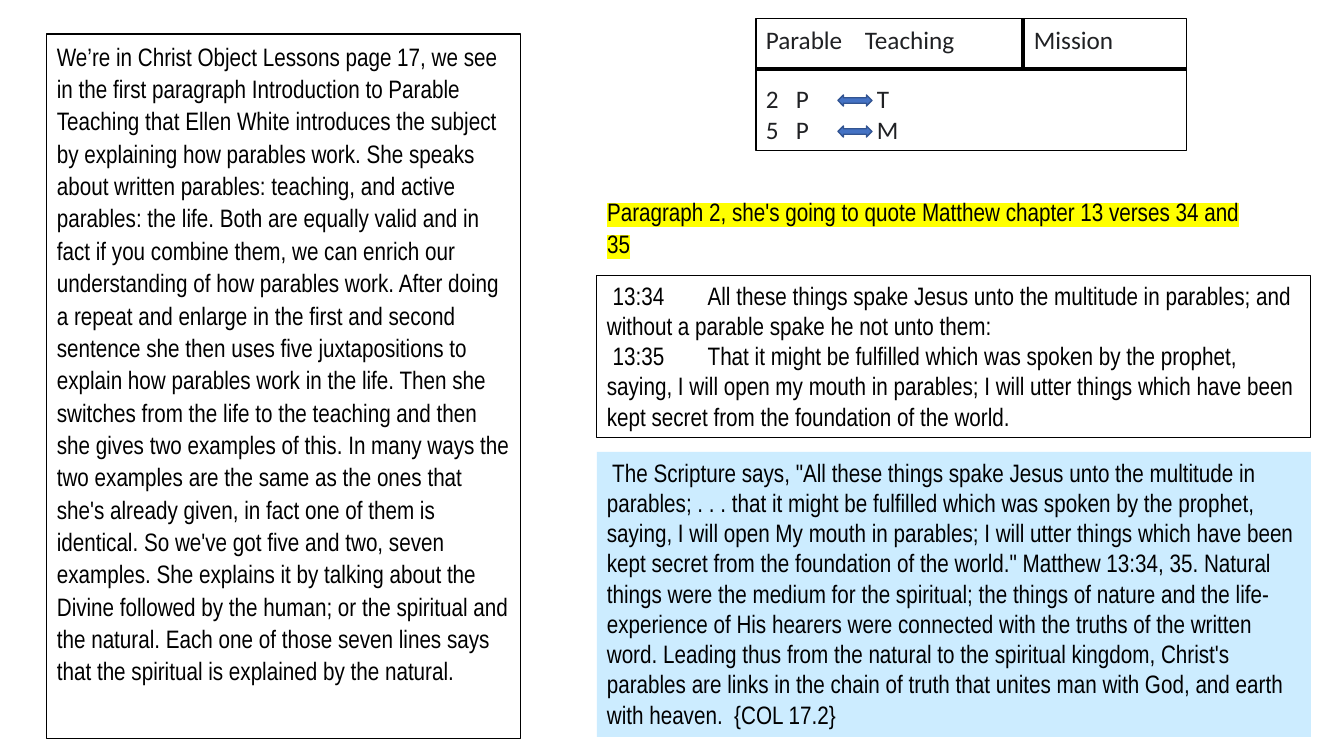
"""Build a study slide on parable teaching."""
from dataclasses import dataclass

from lxml.etree import SubElement as Sub
from pptx import Presentation
from pptx.dml.color import RGBColor as Rgb
from pptx.enum.shapes import MSO_CONNECTOR as Link, MSO_SHAPE as Form
from pptx.enum.text import MSO_ANCHOR as Anchor, MSO_AUTO_SIZE as Fit, PP_ALIGN as Align
from pptx.oxml.ns import qn
from pptx.util import Pt

PX = 914400 / 100.8


@dataclass(frozen=True)
class Theme:
    """Hold colours, fonts and sizes."""
    ink: str = "000000"
    grey: str = "202124"
    white: str = "FFFFFF"
    sky: str = "CCECFF"
    mark: str = "FFFF00"
    blue: str = "4472C4"
    navy: str = "325491"
    body: str = "Arial Narrow"
    head: str = "Calibri"
    size: int = 18
    thin: float = 0.75
    bold: float = 2.25
    loose: float = 1.07


T = Theme()

STUDY = " ".join((
    "We’re in Christ Object Lessons page 17, we see in the first paragraph "
    "Introduction to Parable Teaching that Ellen White introduces the subject by "
    "explaining how parables work.",
    "She speaks about written parables: teaching, and active parables: the life.",
    "Both are equally valid and in fact if you combine them, we can enrich our "
    "understanding of how parables work.",
    "After doing a repeat and enlarge in the first and second sentence she then uses "
    "five juxtapositions to explain how parables work in the life.",
    "Then she switches from the life to the teaching and then she gives two examples "
    "of this.",
    "In many ways the two examples are the same as the ones that she's already given, "
    "in fact one of them is identical.",
    "So we've got five and two, seven examples.",
    "She explains it by talking about the Divine followed by the human; or the "
    "spiritual and the natural.",
    "Each one of those seven lines says that the spiritual is explained by the natural.",
))
TITLE = "Paragraph 2, she's going to quote Matthew chapter 13 verses 34 and 35"
VERSES = (
    " 13:34\tAll these things spake Jesus unto the multitude in parables; and without "
    "a parable spake he not unto them:",
    " 13:35\tThat it might be fulfilled which was spoken by the prophet, saying, I will "
    "open my mouth in parables; I will utter things which have been kept secret from "
    "the foundation of the world.",
)
QUOTE = (
    " The Scripture says, \"All these things spake Jesus unto the multitude in "
    "parables; . . . that it might be fulfilled which was spoken by the prophet, "
    "saying, I will open My mouth in parables; I will utter things which have been "
    "kept secret from the foundation of the world.\" Matthew 13:34, 35. Natural things "
    "were the medium for the spiritual; the things of nature and the life-experience "
    "of His hearers were connected with the truths of the written word. Leading thus "
    "from the natural to the spiritual kingdom, Christ's parables are links in the "
    "chain of truth that unites man with God, and earth with heaven.  {COL 17.2}"
)


def emu(*vals):
    """Turn pixels into EMU."""
    return [round(v * PX) for v in vals]


def paint(shape, fill=None, line=None, width=T.thin):
    """Set fill and outline, without shadow."""
    shape.shadow.inherit = False
    if fill:
        shape.fill.solid()
        shape.fill.fore_color.rgb = Rgb.from_string(fill)
    else:
        shape.fill.background()
    if line:
        shape.line.color.rgb = Rgb.from_string(line)
        shape.line.width = Pt(width)
    else:
        shape.line.fill.background()


def write(shape, paras, font=T.body, color=T.ink, space=1.0, mark=None):
    """Write left-aligned paragraphs from the top and return them."""
    frame = shape.text_frame
    frame.word_wrap = True
    frame.auto_size = Fit.NONE
    frame.vertical_anchor = Anchor.TOP
    for i, text in enumerate(paras):
        para = frame.add_paragraph() if i else frame.paragraphs[0]
        para.alignment = Align.LEFT
        para.line_spacing = space
        run = para.add_run()
        run.text = text
        run.font.size = Pt(T.size)
        run.font.name = font
        run.font.color.rgb = Rgb.from_string(color)
        if mark:
            props = run._r.get_or_add_rPr()
            light = Sub(props, qn("a:highlight"))
            Sub(light, qn("a:srgbClr"), val=mark)
            props.find(qn("a:solidFill")).addnext(light)
    return frame.paragraphs


def panel(slide, box, paras, fill=None, line=None, **style):
    """Add a text panel and return its paragraphs."""
    shape = slide.shapes.add_shape(Form.RECTANGLE, *emu(*box))
    paint(shape, fill, line)
    return write(shape, paras, **style)


def stops(para, *spots):
    """Set left tab stops in pixels."""
    tabs = Sub(para._p.get_or_add_pPr(), qn("a:tabLst"))
    for pos in emu(*spots):
        Sub(tabs, qn("a:tab"), pos=str(pos), algn="l")


def rule(slide, *ends):
    """Draw a heavy straight line."""
    line = slide.shapes.add_connector(Link.STRAIGHT, *emu(*ends))
    line.line.color.rgb = Rgb.from_string(T.ink)
    line.line.width = Pt(T.bold)
    Sub(line._element.spPr, qn("a:effectLst"))


def arrow(slide, *box):
    """Draw a two-way arrow."""
    shape = slide.shapes.add_shape(Form.LEFT_RIGHT_ARROW, *emu(*box))
    paint(shape, T.blue, T.navy, 1)


def chart(slide, x, y, w, h):
    """Draw the parable, teaching and mission grid."""
    rows = ("Parable\tTeaching\tMission", "2\tP\tT", "5\tP\tM")
    head, *pairs = panel(slide, (x, y, w, h), rows, line=T.ink, font=T.head, color=T.grey)
    stops(head, 99, 268)
    pairs[0].space_before = Pt(21)
    for i, para in enumerate(pairs):
        stops(para, 30, 111)
        arrow(slide, x + 82, y + 76 + 31 * i, 34, 11)
    rule(slide, x + 267, y, x + 267, y + 50)
    rule(slide, x, y + 50, x + w, y + 50)


def title(slide, box, text):
    """Place the marked title."""
    shape = slide.shapes.title
    shape.left, shape.top, shape.width, shape.height = emu(*box)
    write(shape, [text], space=T.loose, mark=T.mark)


def main():
    """Build and save the slide."""
    deck = Presentation()
    deck.slide_width, deck.slide_height = emu(1344, 756)
    slide = deck.slides.add_slide(deck.slide_layouts[5])
    chart(slide, 756, 19, 431, 132)
    panel(slide, (47, 34, 474, 705), [STUDY], T.white, T.ink, space=T.loose)
    title(slide, (597, 189, 671, 74), TITLE)
    panel(slide, (597, 452, 714, 285), [QUOTE], T.sky)
    panel(slide, (597, 275, 714, 163), VERSES, line=T.ink)
    deck.save("out.pptx")


if __name__ == "__main__":
    main()
